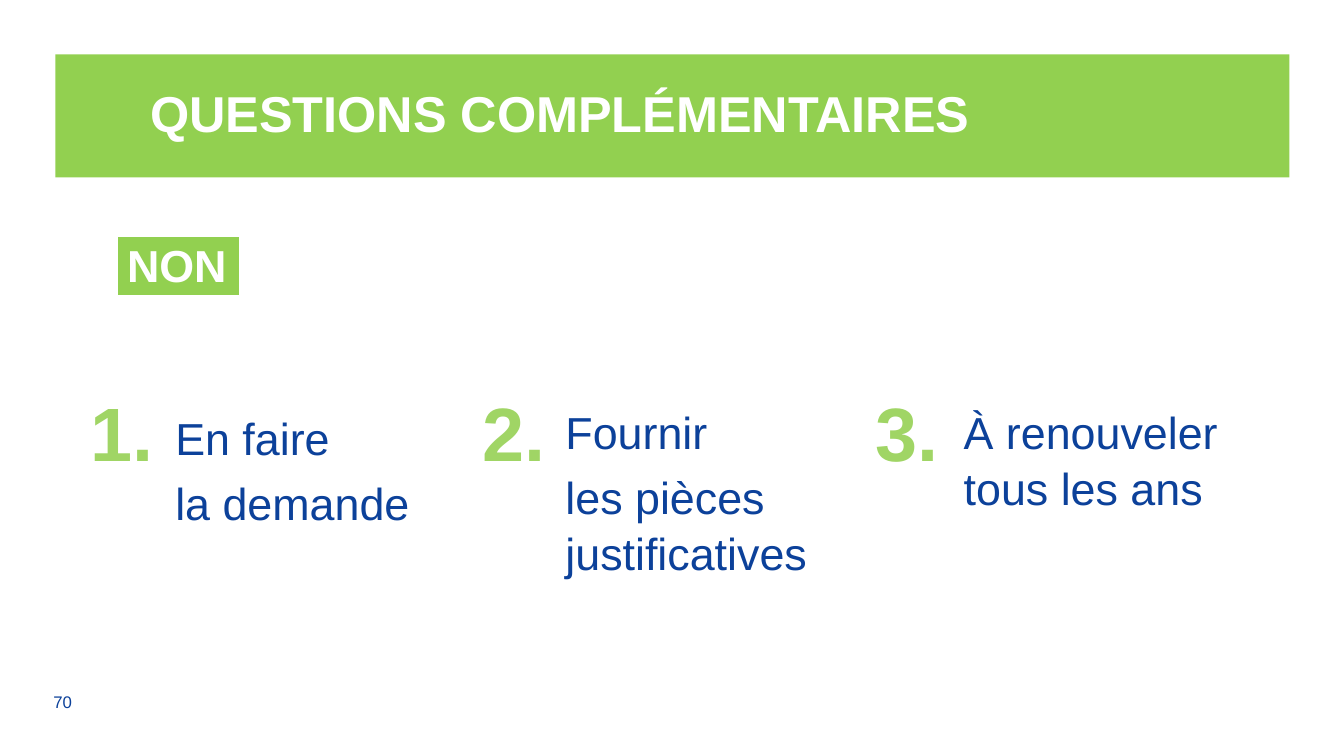
from lxml import etree
from pptx import Presentation
from pptx import util as u
from pptx.dml.color import RGBColor
from pptx.enum import shapes, text
from pptx.oxml import ns

GREEN, LIGHT_GREEN, BLUE, WHITE = "92D050", "A0D565", "0C419A", "FFFFFF"
INDENT = 25


def px(count):
    return u.Emu(count * 9144)


def color(value):
    return RGBColor.from_string(value)


class Slide:
    """Holds the deck style and the current page, and draws each kind of element."""

    font = "Arial"

    def __init__(self, deck):
        self.page = deck.slides.add_slide(deck.slide_layouts[6])

    def fill_text(self, frame, lines, size, ink, bold=False, indent=0, before=0, spacing=None):
        frame.word_wrap = True
        frame.text = "\n".join(lines)
        for para in frame.paragraphs:
            para.alignment = text.PP_ALIGN.LEFT
            para.space_before = u.Pt(before)
            para.line_spacing = spacing
            if indent:
                properties = para._p.get_or_add_pPr()
                properties.set("marL", str(px(indent)))
                properties.set("indent", "0")
            for span in para.runs:
                span.font.name = self.font
                span.font.size = u.Pt(size)
                span.font.bold = bold
                span.font.color.rgb = color(ink)

    def label(self, left, top, width, height, lines, size, ink, **style):
        box = self.page.shapes.add_textbox(px(left), px(top), px(width), px(height))
        self.fill_text(box.text_frame, lines, size, ink, **style)
        return box

    def banner(self, left, top, width, height, title):
        box = self.page.shapes.add_shape(
            shapes.MSO_SHAPE.RECTANGLE, px(left), px(top), px(width), px(height))
        box.shadow.inherit = False
        box.fill.solid()
        box.fill.fore_color.rgb = color(GREEN)
        box.line.fill.background()
        frame = box.text_frame
        frame.margin_left = px(94)
        frame.margin_top = frame.margin_right = frame.margin_bottom = px(8)
        frame.vertical_anchor = text.MSO_ANCHOR.MIDDLE
        self.fill_text(frame, [title], 36, WHITE, bold=True, spacing=0.9)

    def tag(self, left, top, width, height, word):
        table = self.page.shapes.add_table(
            1, 1, px(left), px(top), px(width), px(height)).table
        cell = table.cell(0, 0)
        self.fill_text(cell.text_frame, [word], 32, WHITE, bold=True)
        properties = cell._tc.get_or_add_tcPr()
        for side, points in (("lnL", 1), ("lnR", 1), ("lnT", 1), ("lnB", 3)):
            edge = etree.SubElement(properties, ns.qn("a:" + side), w=str(u.Pt(points)))
            fill = etree.SubElement(edge, ns.qn("a:solidFill"))
            etree.SubElement(fill, ns.qn("a:srgbClr"), val=WHITE)
        cell.fill.solid()
        cell.fill.fore_color.rgb = color(GREEN)

    def step(self, number, left, top, width, lines):
        style = dict(indent=INDENT, before=6, spacing=1.05)
        self.label(left, top, width, 207, lines, 32, BLUE, **style)
        self.label(55 + 389 * (number - 1), 373, 138, 79, [f"{number}."], 54,
                   LIGHT_GREEN, bold=True, **style)


def main():
    deck = Presentation()
    deck.slide_width, deck.slide_height = px(1333), px(750)
    slide = Slide(deck)
    slide.banner(55, 54, 1224, 122, "QUESTIONS COMPLÉMENTAIRES")
    slide.tag(116, 235, 122, 55, "NON")
    steps = [
        (139, 400, 289, ["En faire", "la demande"]),
        (526, 394, 327, ["Fournir", "les pièces justificatives"]),
        (921, 394, 327, ["À renouveler tous les ans"]),
    ]
    for number, step in enumerate(steps, 1):
        slide.step(number, *step)
    page_number = slide.label(43, 681, 79, 31, ["70"], 12, BLUE)
    page_number.text_frame.vertical_anchor = text.MSO_ANCHOR.MIDDLE
    deck.save("out.pptx")


if __name__ == "__main__":
    main()
